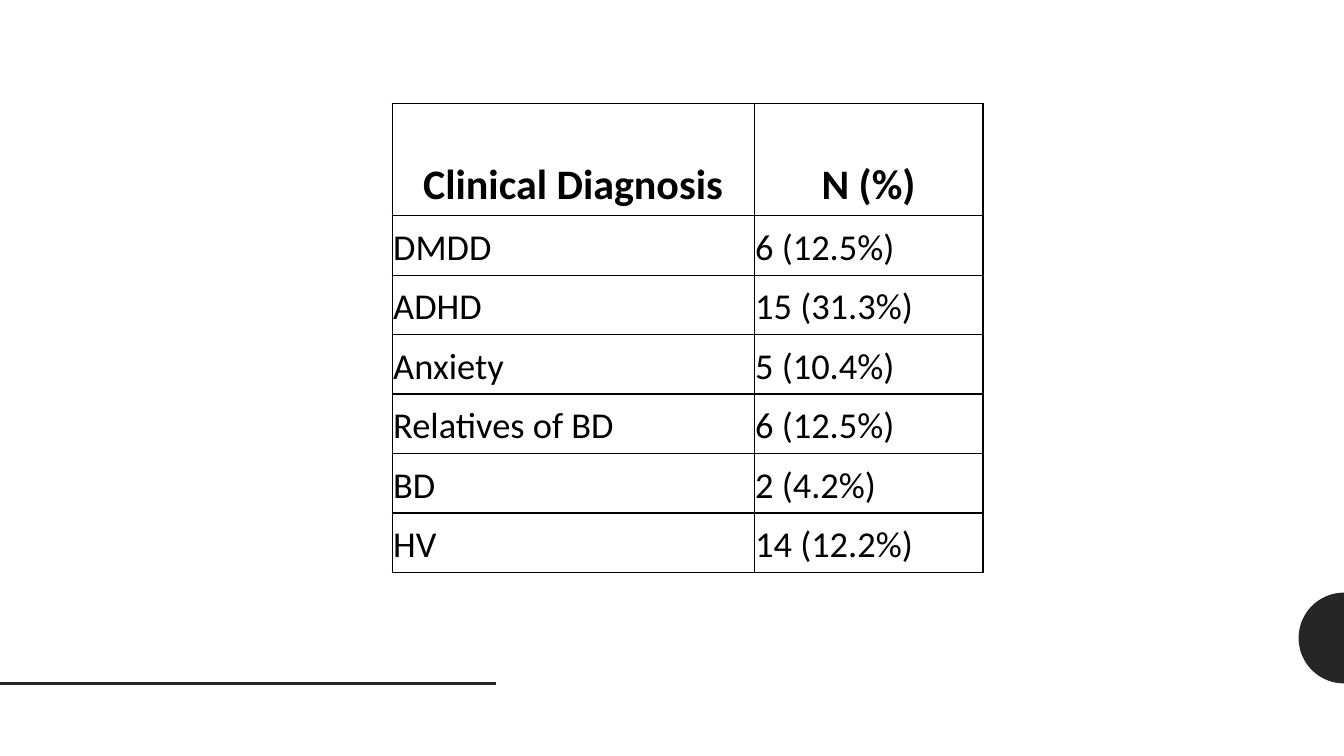
import math

from lxml import etree
from pptx import Presentation
from pptx import util as u
from pptx.dml.color import RGBColor
from pptx.enum import shapes, text
from pptx.oxml import ns

BLACK = RGBColor(0x00, 0x00, 0x00)
CHARCOAL = RGBColor(0x26, 0x26, 0x26)
FONT = "Calibri"
SLIDE_WIDTH, SLIDE_HEIGHT = 13.33, 7.5

DIAGNOSES = [
    ("Clinical Diagnosis", "N (%)"),
    ("DMDD", "6 (12.5%)"),
    ("ADHD", "15 (31.3%)"),
    ("Anxiety", "5 (10.4%)"),
    ("Relatives of BD", "6 (12.5%)"),
    ("BD", "2 (4.2%)"),
    ("HV", "14 (12.2%)"),
]
COLUMN_WIDTHS = (3.59, 2.27)
HEADER_HEIGHT, ROW_HEIGHT = 1.11, 0.59


def add_half_disc(slide, right, center_y, radius):
    """Left half of a disc, its flat side on the right edge."""
    steps = 60
    angles = [math.pi * (0.5 + step / steps) for step in range(steps + 1)]
    points = [(u.Inches(right + radius * math.cos(angle)),
               u.Inches(center_y + radius * math.sin(angle))) for angle in angles]
    builder = slide.shapes.build_freeform(*points[0])
    builder.add_line_segments(points[1:], close=True)
    disc = builder.convert_to_shape()
    disc.shadow.inherit = False
    disc.fill.solid()
    disc.fill.fore_color.rgb = CHARCOAL
    disc.line.fill.background()


def add_rule(slide, left, top, width):
    """Horizontal footer line."""
    rule = slide.shapes.add_connector(
        shapes.MSO_CONNECTOR.STRAIGHT, u.Inches(left), u.Inches(top),
        u.Inches(left + width), u.Inches(top))
    rule.line.color.rgb = CHARCOAL
    rule.line.width = u.Pt(2)
    etree.SubElement(rule._element.spPr, ns.qn("a:effectLst"))


def set_borders(cell, color, width):
    """Draw the four cell borders; they precede the fill in the XML."""
    properties = cell._tc.get_or_add_tcPr()
    for index, side in enumerate(("lnL", "lnR", "lnT", "lnB")):
        border = etree.Element(ns.qn(f"a:{side}"), w=str(u.Pt(width)))
        fill = etree.SubElement(border, ns.qn("a:solidFill"))
        etree.SubElement(fill, ns.qn("a:srgbClr"), val=str(color))
        properties.insert(index, border)


def format_cell(cell, content, is_header):
    cell.fill.background()
    set_borders(cell, BLACK, 1)
    cell.vertical_anchor = text.MSO_ANCHOR.BOTTOM
    cell.margin_left = cell.margin_right = cell.margin_top = u.Inches(0.01)
    cell.margin_bottom = u.Inches(0.05)
    cell.text_frame.text = content
    paragraph = cell.text_frame.paragraphs[0]
    paragraph.alignment = text.PP_ALIGN.CENTER if is_header else text.PP_ALIGN.LEFT
    font = paragraph.runs[0].font
    font.name = FONT
    font.size = u.Pt(30 if is_header else 26)
    font.bold = is_header
    font.color.rgb = BLACK


def add_diagnosis_table(slide, left, top):
    """Clinical diagnoses with counts and percentages."""
    height = HEADER_HEIGHT + ROW_HEIGHT * (len(DIAGNOSES) - 1)
    table = slide.shapes.add_table(
        len(DIAGNOSES), len(COLUMN_WIDTHS), u.Inches(left), u.Inches(top),
        u.Inches(sum(COLUMN_WIDTHS)), u.Inches(height)).table
    table.horz_banding = False
    for column, width in zip(table.columns, COLUMN_WIDTHS):
        column.width = u.Inches(width)
    for row_index, (row, values) in enumerate(zip(table.rows, DIAGNOSES)):
        is_header = row_index == 0
        row.height = u.Inches(HEADER_HEIGHT if is_header else ROW_HEIGHT)
        for cell, content in zip(row.cells, values):
            format_cell(cell, content, is_header)


def main():
    presentation = Presentation()
    presentation.slide_width = u.Inches(SLIDE_WIDTH)
    presentation.slide_height = u.Inches(SLIDE_HEIGHT)
    slide = presentation.slides.add_slide(presentation.slide_layouts[6])

    # Decoration
    add_half_disc(slide, SLIDE_WIDTH, 6.33, 0.45)
    add_rule(slide, 0, 6.78, 4.92)

    # Content
    add_diagnosis_table(slide, 3.89, 1.03)
    presentation.save("out.pptx")


if __name__ == "__main__":
    main()
